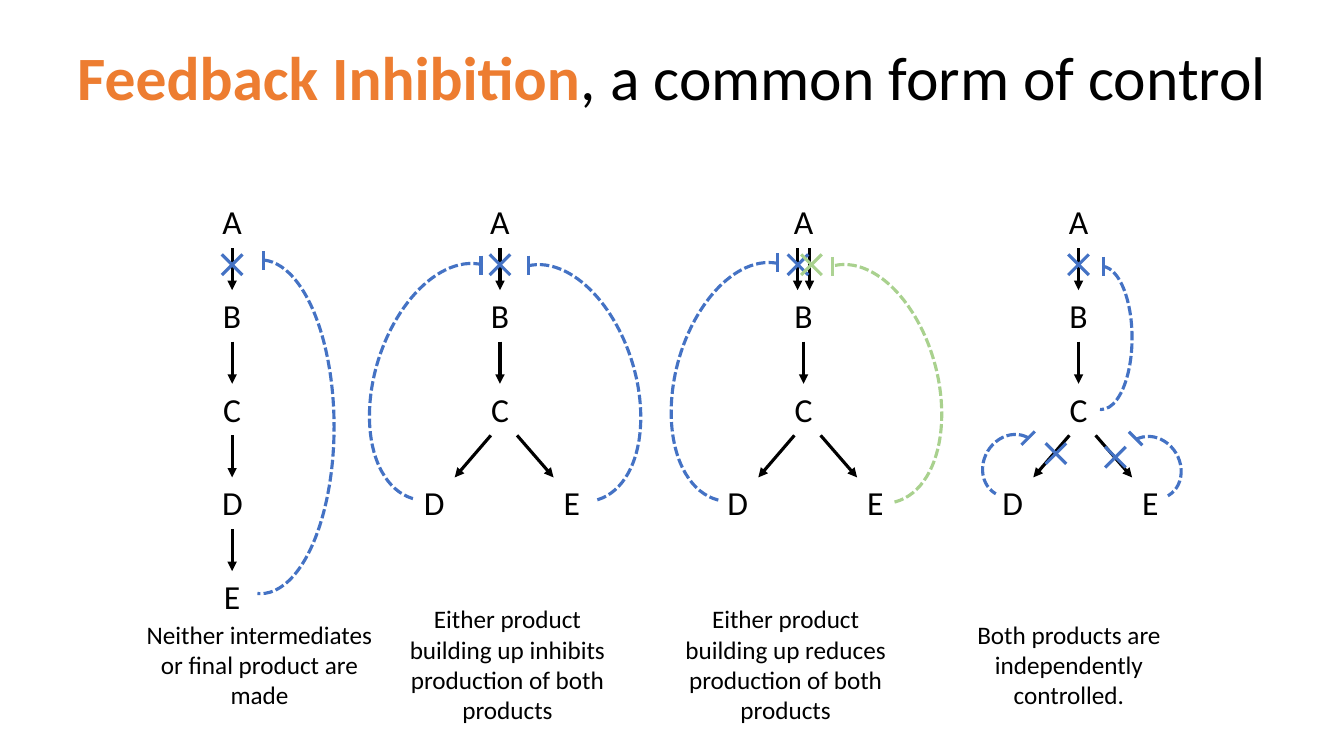
import math
from dataclasses import dataclass

from lxml import etree
from pptx import Presentation
from pptx import util as u
from pptx.dml.color import RGBColor
from pptx.enum import dml, shapes, text
from pptx.oxml.ns import qn

COLORS = {"black": "000000", "orange": "ED7D31", "blue": "4472C4",
          "green": "A9D18E", "pale": "ADD393"}

# Lengths are in centimetres; dx is measured from the axis of a pathway.
ROW_TOP, ROW_STEP = 4.95, 2.36
LABEL_W, LABEL_H = 1.0, 1.27
CAPTION_W = 6.38
CROSS_HALF, BAR_HALF = 0.26, 0.24
FORK = {"D": (-1.67, -0.23, -1.14), "E": (1.81, 0.43, 1.35)}  # label, arrow start, arrow end


@dataclass
class Loop:
    dx: float
    top: float
    width: float
    height: float
    tilt: float = 0  # a loop tilted clockwise is mirrored
    color: str = "blue"


@dataclass
class Bar:
    dx: float
    y: float
    tilt: float = 0
    color: str = "blue"


@dataclass
class Cross:
    dx: float
    y: float = 6.67
    color: str = "blue"


@dataclass
class Pathway:
    x: float
    caption: str
    caption_left: float
    caption_top: float
    caption_height: float
    loops: list[Loop]
    bars: list[Bar]
    crosses: list[Cross]
    forked: bool = True
    first_arrows: tuple = (0,)


PATHWAYS = [
    Pathway(5.85, "Neither intermediates or final product are made", 3.35, 15.47, 2.57,
            [Loop(-1.14, 6.55, 3.71, 8.41)], [Bar(0.79, 6.57)], [Cross(0)], forked=False),
    Pathway(12.6, "Either product building up inhibits production of both products",
            9.6, 15.09, 3.33,
            [Loop(-0.3, 6.58, 3.71, 6.15, -17.4), Loop(-3.15, 6.55, 3.71, 6.15, 17.4)],
            [Bar(-0.48, 6.68), Bar(0.71, 6.68)], [Cross(0)]),
    Pathway(20.25, "Either product building up reduces production of both products",
            16.61, 15.09, 3.33,
            [Loop(-3.23, 6.55, 3.71, 6.15, 14.9),
             Loop(-0.33, 6.6, 3.71, 6.15, -14.9, "green")],
            [Bar(-0.66, 6.62), Bar(0.74, 6.71, color="pale")],
            [Cross(-0.14), Cross(0.2, color="green")], first_arrows=(-0.15, 0.15)),
    Pathway(27.18, "Both products are independently controlled.", 23.75, 15.47, 2.57,
            [Loop(1.14, 10.97, 1.42, 1.63, -30.7), Loop(-2.39, 10.92, 1.42, 1.63, 30.7),
             Loop(-0.2, 6.71, 1.55, 3.61)],
            [Bar(0.64, 6.71), Bar(-1.27, 11.04, 45), Bar(1.44, 11.05, -45)],
            [Cross(0), Cross(0.93, 11.52), Cross(-0.57, 11.43)]),
]


def rgb(name: str) -> RGBColor:
    return RGBColor.from_string(COLORS[name])


def add_text(slide, runs: list[tuple], left: float, top: float, width: float, height: float,
             *, size: float, wrap: bool = True, spacing: float = 1.0,
             anchor=text.MSO_ANCHOR.TOP, fit=text.MSO_AUTO_SIZE.SHAPE_TO_FIT_TEXT) -> None:
    """Add a centred text box; each run is (words, colour, bold)."""
    sp = slide.shapes.add_textbox(u.Cm(left), u.Cm(top), u.Cm(width), u.Cm(height))
    tf = sp.text_frame
    tf.word_wrap, tf.auto_size, tf.vertical_anchor = wrap, fit, anchor
    p = tf.paragraphs[0]
    p.alignment, p.line_spacing = text.PP_ALIGN.CENTER, spacing
    for words, color, bold in runs:
        r = p.add_run()
        r.text = words
        r.font.name, r.font.size, r.font.bold = "Calibri", u.Pt(size), bold
        r.font.color.rgb = rgb(color)


def add_line(slide, x1: float, y1: float, x2: float, y2: float,
             color: str = "black", arrow: bool = False) -> None:
    sp = slide.shapes.add_connector(shapes.MSO_CONNECTOR.STRAIGHT,
                                    u.Cm(x1), u.Cm(y1), u.Cm(x2), u.Cm(y2))
    sp.line.color.rgb, sp.line.width = rgb(color), u.Pt(2.25)
    if arrow:
        etree.SubElement(sp.line._get_or_add_ln(), qn("a:tailEnd"), type="triangle")
    etree.SubElement(sp._element.spPr, qn("a:effectLst"))


def add_loop(slide, x: float, loop: Loop) -> None:
    sp = slide.shapes.add_shape(shapes.MSO_SHAPE.ARC, u.Cm(x + loop.dx), u.Cm(loop.top),
                                u.Cm(loop.width), u.Cm(loop.height))
    sp.adjustments[0], sp.adjustments[1] = 162.69, 54.621
    sp.rotation = loop.tilt
    if loop.tilt > 0:
        sp._element.spPr.xfrm.set("flipH", "1")
    sp.shadow.inherit = False
    sp.fill.background()
    sp.line.color.rgb, sp.line.width = rgb(loop.color), u.Pt(2.25)
    sp.line.dash_style = dml.MSO_LINE.SQUARE_DOT


def add_bar(slide, x: float, bar: Bar) -> None:
    dx = BAR_HALF * math.sin(math.radians(bar.tilt))
    dy = BAR_HALF * math.cos(math.radians(bar.tilt))
    cx = x + bar.dx
    add_line(slide, cx + dx, bar.y - dy, cx - dx, bar.y + dy, bar.color)


def add_cross(slide, x: float, cross: Cross) -> None:
    cx = x + cross.dx
    for dy in (CROSS_HALF, -CROSS_HALF):
        add_line(slide, cx - CROSS_HALF, cross.y - dy, cx + CROSS_HALF, cross.y + dy,
                 cross.color)


def add_label(slide, letter: str, x: float, row: int) -> None:
    add_text(slide, [(letter, "black", False)], x - LABEL_W / 2, ROW_TOP + row * ROW_STEP,
             LABEL_W, LABEL_H, size=24, wrap=False)


def add_step(slide, x1: float, x2: float, row: int) -> None:
    """Add the arrow that leads from one row of labels to the next."""
    top = ROW_TOP + row * ROW_STEP
    add_line(slide, x1, top + 1.3, x2, top + ROW_STEP, arrow=True)


def add_pathway(slide, path: Pathway) -> None:
    # Labels and reaction arrows
    chain = "ABC" if path.forked else "ABCDE"
    for row, letter in enumerate(chain):
        add_label(slide, letter, path.x, row)
    for dx in path.first_arrows:
        add_step(slide, path.x + dx, path.x + dx, 0)
    for row in range(1, len(chain) - 1):
        add_step(slide, path.x, path.x, row)
    if path.forked:
        for letter, (label_dx, start, end) in FORK.items():
            add_label(slide, letter, path.x + label_dx, 3)
            add_step(slide, path.x + start, path.x + end, 2)
    # Inhibition marks
    for loop in path.loops:
        add_loop(slide, path.x, loop)
    for bar in path.bars:
        add_bar(slide, path.x, bar)
    for cross in path.crosses:
        add_cross(slide, path.x, cross)
    # Caption
    add_text(slide, [(path.caption, "black", False)], path.caption_left, path.caption_top,
             CAPTION_W, path.caption_height, size=18)


def main() -> None:
    prs = Presentation()
    prs.slide_width, prs.slide_height = u.Cm(33.87), u.Cm(19.05)
    slide = prs.slides.add_slide(prs.slide_layouts[6])
    # Title
    add_text(slide, [("Feedback Inhibition", "orange", True),
                     (", a common form of control", "black", False)],
             0.97, 0.2, 31.93, 3.68, size=44, spacing=0.9,
             anchor=text.MSO_ANCHOR.MIDDLE, fit=text.MSO_AUTO_SIZE.NONE)
    # Pathways
    for path in PATHWAYS:
        add_pathway(slide, path)
    prs.save("out.pptx")


if __name__ == "__main__":
    main()
